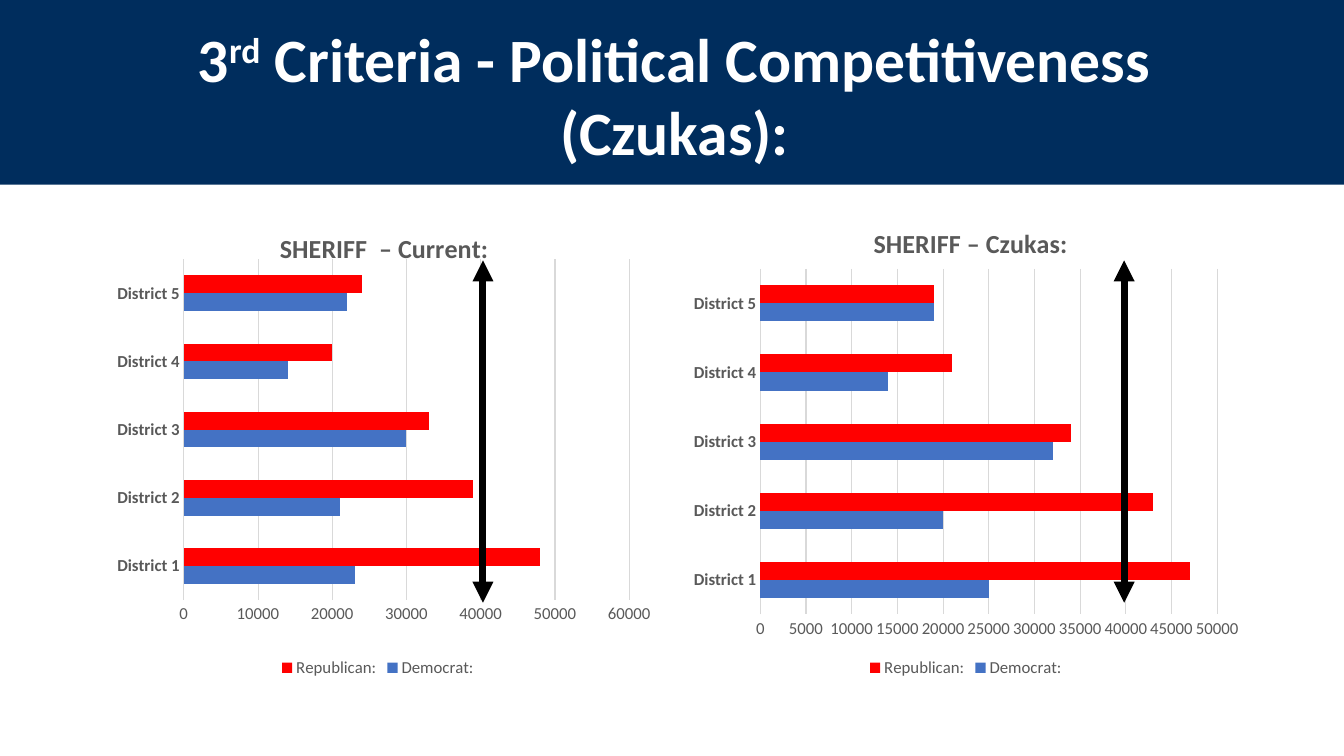
from dataclasses import dataclass

from lxml import etree
from pptx import Presentation
from pptx.chart.data import CategoryChartData
from pptx.dml.color import RGBColor
from pptx.enum.chart import XL_CHART_TYPE, XL_LEGEND_POSITION, XL_TICK_MARK
from pptx.enum.shapes import MSO_CONNECTOR, MSO_SHAPE
from pptx.enum.text import MSO_ANCHOR, MSO_AUTO_SIZE, PP_ALIGN
from pptx.oxml import parse_xml
from pptx.oxml.ns import nsdecls, qn
from pptx.util import Pt

BAR = XL_CHART_TYPE.BAR_CLUSTERED
BOTTOM = XL_LEGEND_POSITION.BOTTOM
NO_TICK = XL_TICK_MARK.NONE
STRAIGHT = MSO_CONNECTOR.STRAIGHT
RECT = MSO_SHAPE.RECTANGLE
TOP = MSO_ANCHOR.TOP
NO_FIT = MSO_AUTO_SIZE.NONE
CENTER = PP_ALIGN.CENTER


@dataclass(frozen=True)
class Theme:
    font: str = "Calibri"
    navy: str = "002D5D"
    white: str = "FFFFFF"
    black: str = "000000"
    gray: str = "595959"
    grid: str = "D9D9D9"
    democrat: str = "4472C4"
    republican: str = "FF0000"
    title: float = 44
    chart_title: float = 18.6
    label: float = 12


T = Theme()
DISTRICTS = [f"District {n}" for n in range(1, 6)]
CHART_TOP, CHART_W, CHART_H = 144, 408, 343


def rgb(value):
    return RGBColor.from_string(value)


def set_font(font, size=T.label, color=T.gray, bold=False):
    font.name, font.size, font.bold = T.font, Pt(size), bold
    font.color.rgb = rgb(color)


def add_run(p, text, baseline=0, **fmt):
    r = p.add_run()
    r.text = text
    set_font(r.font, **fmt)
    if baseline:
        r.font._element.set("baseline", str(baseline * 1000))


def add_band(s, top, height):
    band = s.shapes.add_shape(RECT, 0, Pt(top), Pt(960), Pt(height))
    band.shadow.inherit = False
    band.fill.solid()
    band.fill.fore_color.rgb = rgb(T.navy)
    band.line.fill.background()
    s.shapes._spTree.insert(2, band._element)  # behind the title


def add_title(s, lines):
    sp = s.shapes.title
    sp.left, sp.top, sp.width, sp.height = Pt(40), Pt(11), Pt(848), Pt(165)
    tf = sp.text_frame
    tf.auto_size, tf.word_wrap, tf.vertical_anchor = NO_FIT, True, TOP
    tf.margin_left = Pt(43)
    for i, runs in enumerate(lines):
        p = tf.add_paragraph() if i else tf.paragraphs[0]
        p.alignment = CENTER
        for text, baseline in runs:
            add_run(p, text, baseline, size=T.title, color=T.white, bold=True)


def manual_layout(**fractions):
    """Layout element; fractions x, y, w, h are shares of the chart area."""
    target = '<c:layoutTarget val="inner"/>' if "w" in fractions else ""
    modes = '<c:xMode val="edge"/><c:yMode val="edge"/>'
    values = "".join(f'<c:{k} val="{v}"/>' for k, v in fractions.items())
    return parse_xml(f'<c:layout {nsdecls("c")}><c:manualLayout>'
                     f'{target}{modes}{values}</c:manualLayout></c:layout>')


def place(parent, index, layout):
    for old in parent.findall(qn("c:layout")):
        parent.remove(old)
    parent.insert(index, layout)


def add_bar_chart(s, left, title, title_at, plot, top_value, step, series):
    data = CategoryChartData()
    data.categories = DISTRICTS
    for name, _, values in series:
        data.add_series(name, values)
    chart = s.shapes.add_chart(BAR, Pt(left), Pt(CHART_TOP), Pt(CHART_W),
                               Pt(CHART_H), data).chart
    set_font(chart.font)

    # Title and plot area
    chart.has_title = True
    add_run(chart.chart_title.text_frame.paragraphs[0], title,
            size=T.chart_title, bold=True)
    place(chart.chart_title._element, 1, manual_layout(**title_at))
    place(chart._chartSpace.chart.plotArea, 0, manual_layout(**plot))

    # Bars
    bars = chart.plots[0]
    bars.gap_width, bars.overlap, bars.vary_by_categories = 182, 0, False
    for ser, (_, color, _) in zip(bars.series, series):
        ser.format.fill.solid()
        ser.format.fill.fore_color.rgb = rgb(color)

    # Axes
    cat, val = chart.category_axis, chart.value_axis
    for axis in (cat, val):
        axis.major_tick_mark = axis.minor_tick_mark = NO_TICK
        set_font(axis.tick_labels.font, bold=axis is cat)
    val.minimum_scale, val.maximum_scale, val.major_unit = 0, top_value, step
    val.has_major_gridlines = True
    val.format.line.fill.background()
    for line in (cat.format.line, val.major_gridlines.format.line):
        line.color.rgb = rgb(T.grid)
        line.width = Pt(0.75)

    # Legend
    chart.has_legend = True
    chart.legend.position = BOTTOM
    chart.legend.include_in_layout = False
    set_font(chart.legend.font)


def add_double_arrow(s, x, top, bottom):
    arrow = s.shapes.add_connector(STRAIGHT, Pt(x), Pt(top), Pt(x), Pt(bottom))
    arrow.line.color.rgb = rgb(T.black)
    arrow.line.width = Pt(5)
    ln = arrow.line._get_or_add_ln()
    for end in ("a:headEnd", "a:tailEnd"):
        etree.SubElement(ln, qn(end), type="triangle")
    etree.SubElement(arrow._element.spPr, qn("a:effectLst"))


def main():
    prs = Presentation()
    prs.slide_width, prs.slide_height = Pt(960), Pt(540)
    s = prs.slides.add_slide(prs.slide_layouts[5])

    # Heading
    add_band(s, -2, 134)
    add_title(s, [
        [("3", 0), ("rd", 30), (" Criteria - Political Competitiveness", 0)],
        [("(Czukas):", 0)],
    ])

    # Current districts
    add_bar_chart(s, 66, "SHERIFF  – Current:", dict(x=0.32, y=0.05),
                  dict(x=0.16, y=0.12, w=0.78, h=0.71), 60000, 10000, [
        ("Democrat:", T.democrat, [23000, 21000, 30000, 14000, 22000]),
        ("Republican:", T.republican, [48000, 39000, 33000, 20000, 24000]),
    ])

    # Proposed districts
    add_bar_chart(s, 486, "SHERIFF – Czukas:", dict(x=0.33, y=0.04),
                  dict(x=0.14, y=0.14, w=0.8, h=0.72), 50000, 5000, [
        ("Democrat:", T.democrat, [25000, 20000, 32000, 14000, 19000]),
        ("Republican:", T.republican, [47000, 43000, 34000, 21000, 19000]),
    ])

    # Markers at 40000
    for x in (345, 803):
        add_double_arrow(s, x, 186, 430.5)

    prs.save("out.pptx")


if __name__ == "__main__":
    main()
